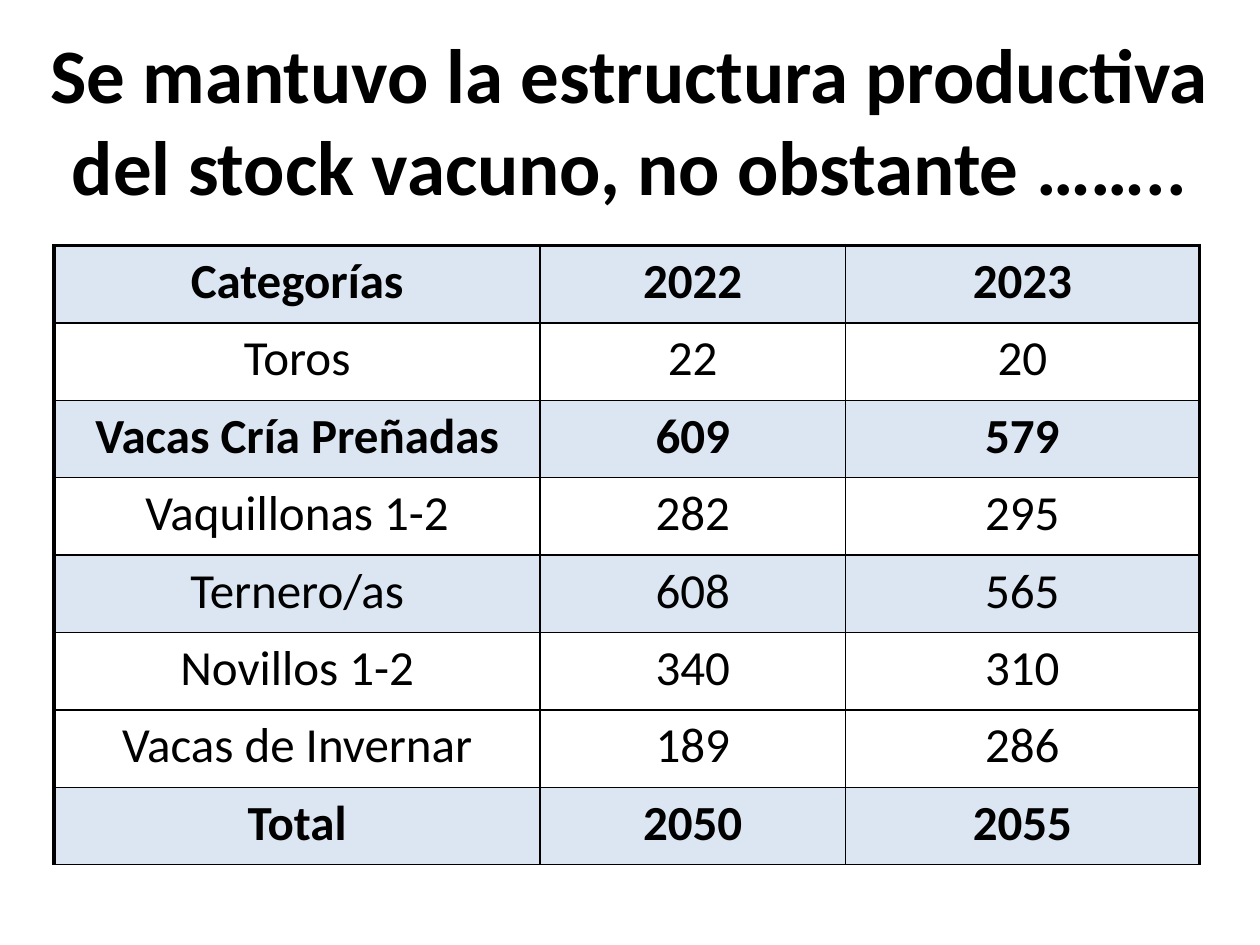
"""Build a slide with a table comparing the cattle stock of 2022 and 2023."""
from lxml.etree import SubElement
from pptx import Presentation
from pptx.dml.color import RGBColor
from pptx.enum.text import MSO_ANCHOR, PP_ALIGN
from pptx.oxml.ns import qn
from pptx.util import Cm, Pt

COLORS = {"text": "000000", "border": "000000", "band": "DCE6F2"}
THIN, THICK = Pt(1), Pt(2.25)


def write_text(text_frame, text, size, bold=False):
    paragraph = text_frame.paragraphs[0]
    paragraph.alignment = PP_ALIGN.CENTER
    run = paragraph.add_run()
    run.text = text
    run.font.name = "Calibri"
    run.font.size = Pt(size)
    run.font.bold = bold
    run.font.color.rgb = RGBColor.from_string(COLORS["text"])


def add_borders(cell, **widths):
    properties = cell._tc.get_or_add_tcPr()
    for side in ("L", "R", "T", "B"):
        line = SubElement(properties, qn(f"a:ln{side}"), w=str(widths.get(side, THIN)))
        fill = SubElement(line, qn("a:solidFill"))
        SubElement(fill, qn("a:srgbClr"), val=COLORS["border"])


presentation = Presentation()
presentation.slide_width = Cm(25.4)
presentation.slide_height = Cm(19.05)
slide = presentation.slides.add_slide(presentation.slide_layouts[6])

title = slide.shapes.add_textbox(Cm(0), Cm(0), Cm(25.4), Cm(4.78))
title.text_frame.word_wrap = True
title.text_frame.vertical_anchor = MSO_ANCHOR.MIDDLE
write_text(
    title.text_frame,
    "Se mantuvo la estructura productiva del stock vacuno, no obstante ……..",
    size=44,
    bold=True,
)

stock = [
    ("Categorías", "2022", "2023"),
    ("Toros", "22", "20"),
    ("Vacas Cría Preñadas", "609", "579"),
    ("Vaquillonas 1-2", "282", "295"),
    ("Ternero/as", "608", "565"),
    ("Novillos 1-2", "340", "310"),
    ("Vacas de Invernar", "189", "286"),
    ("Total", "2050", "2055"),
]
bold_rows = {0, 2, 7}
banded_rows = bold_rows | {4}
column_widths = [9.8, 6.15, 7.14]
row_height = 1.56

table = slide.shapes.add_table(
    len(stock), len(column_widths), Cm(1.09), Cm(4.95),
    Cm(sum(column_widths)), Cm(row_height * len(stock)),
).table
for column, width in zip(table.columns, column_widths):
    column.width = Cm(width)

last_column = len(column_widths) - 1
for row_index, values in enumerate(stock):
    table.rows[row_index].height = Cm(row_height)
    for column_index, value in enumerate(values):
        cell = table.cell(row_index, column_index)
        write_text(cell.text_frame, value, size=28, bold=row_index in bold_rows)
        add_borders(
            cell,
            L=THICK if column_index == 0 else THIN,
            R=THICK if column_index == last_column else THIN,
            T=THICK if row_index == 0 else THIN,
        )
        if row_index in banded_rows:
            cell.fill.solid()
            cell.fill.fore_color.rgb = RGBColor.from_string(COLORS["band"])
        else:
            cell.fill.background()

presentation.save("out.pptx")
